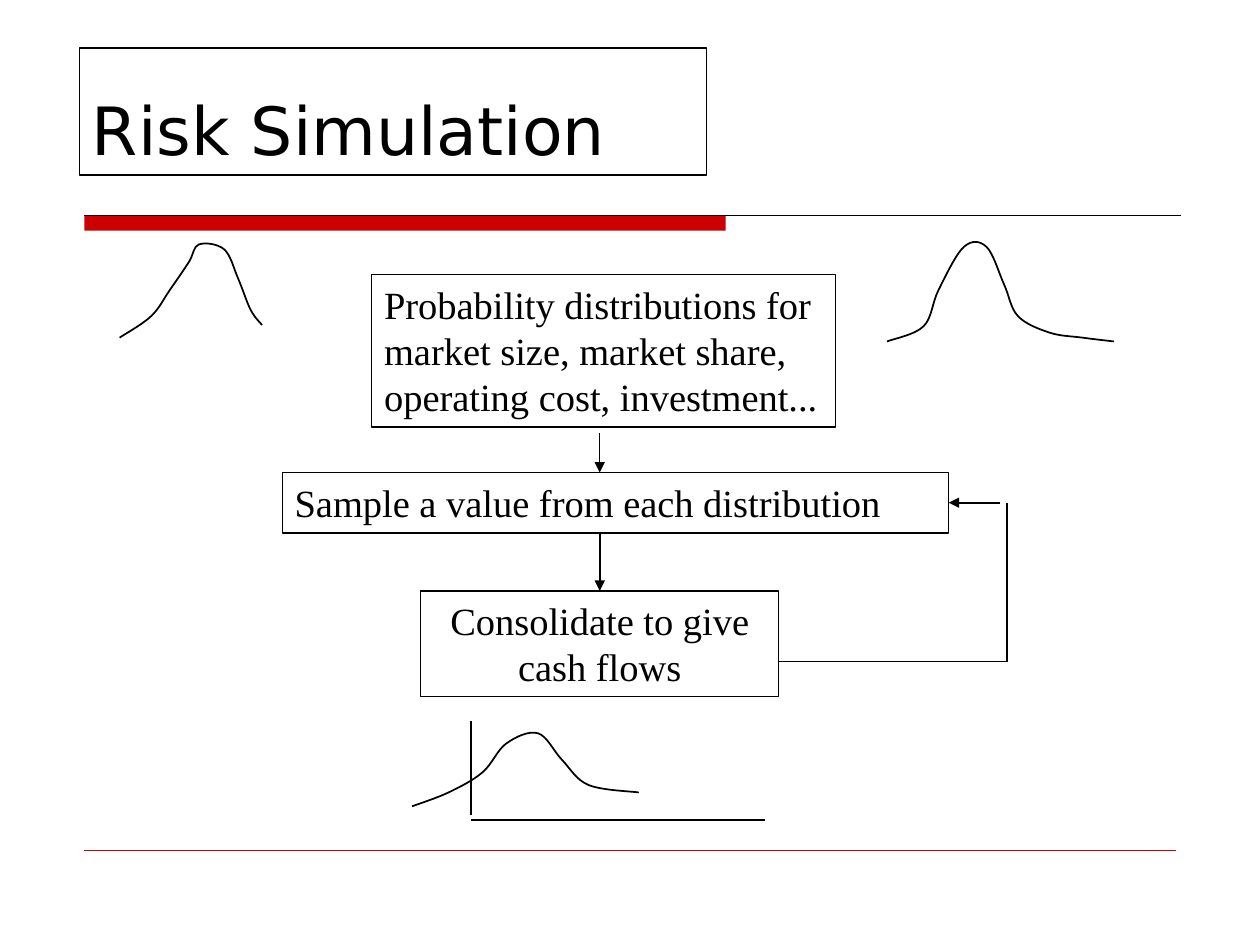
"""Build the Risk Simulation slide: a flow of boxes with distribution curves."""
from lxml import etree
from pptx import Presentation
from pptx.dml.color import RGBColor
from pptx.enum.shapes import MSO_CONNECTOR, MSO_SHAPE
from pptx.enum.text import MSO_ANCHOR, MSO_AUTO_SIZE, PP_ALIGN
from pptx.oxml.ns import qn
from pptx.util import Inches, Pt

STRAIGHT = MSO_CONNECTOR.STRAIGHT
RECT = MSO_SHAPE.RECTANGLE
BOTTOM = MSO_ANCHOR.BOTTOM
GROW, FIXED = MSO_AUTO_SIZE.SHAPE_TO_FIT_TEXT, MSO_AUTO_SIZE.NONE
LEFT, CENTER = PP_ALIGN.LEFT, PP_ALIGN.CENTER
TOP_SIDE, RIGHT_SIDE = 0, 3
COLORS = {"ink": "000000", "red": "CC0000"}
HEAD, BODY = "DejaVu Sans", "Times New Roman"


class Deck:
    """Holds the style and the current slide."""

    def __init__(self):
        self.prs = Presentation()
        self.prs.slide_width, self.prs.slide_height = Inches(10), Inches(7.5)
        self.slide = self.prs.slides.add_slide(self.prs.slide_layouts[5])
        self.shapes = self.slide.shapes

    def color(self, name):
        return RGBColor.from_string(COLORS[name])

    def stroke(self, shape, width, color="ink"):
        shape.line.color.rgb = self.color(color)
        shape.line.width = Pt(width)

    def label(self, shape, text, font, size, align):
        self.stroke(shape, 0.75)
        frame = shape.text_frame
        frame.word_wrap = True
        frame.text = text
        para = frame.paragraphs[0]
        para.alignment = align
        para.font.name, para.font.size = font, Pt(size)
        para.font.color.rgb = self.color("ink")
        return frame

    def title(self, text, left, top, width, height):
        shape = self.shapes.title
        shape.left, shape.top = Inches(left), Inches(top)
        shape.width, shape.height = Inches(width), Inches(height)
        frame = self.label(shape, text, HEAD, 38, LEFT)
        frame.auto_size = FIXED
        frame.vertical_anchor = BOTTOM

    def box(self, text, left, top, width, height, align=LEFT):
        shape = self.shapes.add_textbox(*map(Inches, (left, top, width, height)))
        self.label(shape, text, BODY, 22, align).auto_size = GROW
        return shape

    def bar(self, left, top, width, height):
        shape = self.shapes.add_shape(RECT, *map(Inches, (left, top, width, height)))
        shape.shadow.inherit = False
        shape.fill.solid()
        shape.fill.fore_color.rgb = self.color("red")
        shape.line.fill.background()

    def line(self, start, end, width=1, color="ink", arrow=False):
        link = self.shapes.add_connector(STRAIGHT, *map(Inches, start + end))
        self.stroke(link, width, color)
        etree.SubElement(link._element.spPr, qn("a:effectLst"))
        if arrow:
            etree.SubElement(link.line._get_or_add_ln(), qn("a:tailEnd"), type="triangle")
        return link

    def curve(self, knots):
        """Draw a smooth open curve through the knots."""
        points = []
        padded = [knots[0], *knots, knots[-1]]
        for a, b, c, d in zip(padded, padded[1:], padded[2:], padded[3:]):
            points += [
                tuple(q + (r - p) / 6 for p, q, r in zip(a, b, c)),
                tuple(r - (s - q) / 6 for q, r, s in zip(b, c, d)),
                c,
            ]
        pen = self.shapes.build_freeform(*map(Inches, knots[0]))
        pen.add_line_segments([tuple(map(Inches, p)) for p in points], close=False)
        shape = pen.convert_to_shape()
        shape.shadow.inherit = False
        shape.fill.background()
        self.stroke(shape, 1)
        route = next(shape._element.iter(qn("a:path")))
        steps = route.findall(qn("a:lnTo"))
        for i in range(0, len(steps), 3):
            bend = etree.SubElement(route, qn("a:cubicBezTo"))
            for step in steps[i:i + 3]:
                bend.append(step[0])
                route.remove(step)


def main():
    deck = Deck()
    deck.bar(0.67, 1.71, 5.09, 0.12)
    deck.line((0.67, 1.71), (9.37, 1.71), 0.75)
    deck.line((0.67, 6.75), (9.33, 6.75), 0.25, "red")
    deck.title("Risk Simulation", 0.63, 0.38, 4.98, 1.01)

    deck.box("Probability distributions for market size, market share, "
             "operating cost, investment...", 2.95, 2.18, 3.68, 1.21)
    sample = deck.box("Sample a value from each distribution", 2.24, 3.75, 5.29, 0.48)
    merge = deck.box("Consolidate to give cash flows", 3.34, 4.69, 2.84, 0.84, CENTER)

    mid, loop = 4.76, 7.99
    deck.line((mid, 3.44), (mid, 3.75), 0.75, arrow=True)
    down = deck.line((mid, 4.22), (mid, 4.69), arrow=True)
    down.end_connect(merge, TOP_SIDE)
    deck.line((6.18, 5.25), (loop, 5.25))
    deck.line((loop, 5.25), (loop, 3.99))
    back = deck.line((7.94, 3.99), (7.53, 3.99), arrow=True)
    back.end_connect(sample, RIGHT_SIDE)

    deck.curve([(7.04, 2.71), (7.33, 2.59), (7.45, 2.3), (7.65, 1.96), (7.83, 1.96),
                (7.97, 2.26), (8.08, 2.51), (8.33, 2.64), (8.59, 2.68), (8.84, 2.71)])
    deck.curve([(0.95, 2.68), (1.2, 2.51), (1.35, 2.3), (1.5, 2.08), (1.58, 1.94),
                (1.78, 1.98), (1.89, 2.21), (1.99, 2.46), (2.08, 2.58)])
    deck.line((3.74, 5.72), (3.74, 6.47))
    deck.line((3.74, 6.51), (6.07, 6.51))
    deck.curve([(3.27, 6.4), (3.56, 6.29), (3.83, 6.13), (4.02, 5.9), (4.27, 5.82),
                (4.46, 6.03), (4.67, 6.23), (5.07, 6.29)])
    deck.prs.save("out.pptx")


if __name__ == "__main__":
    main()
